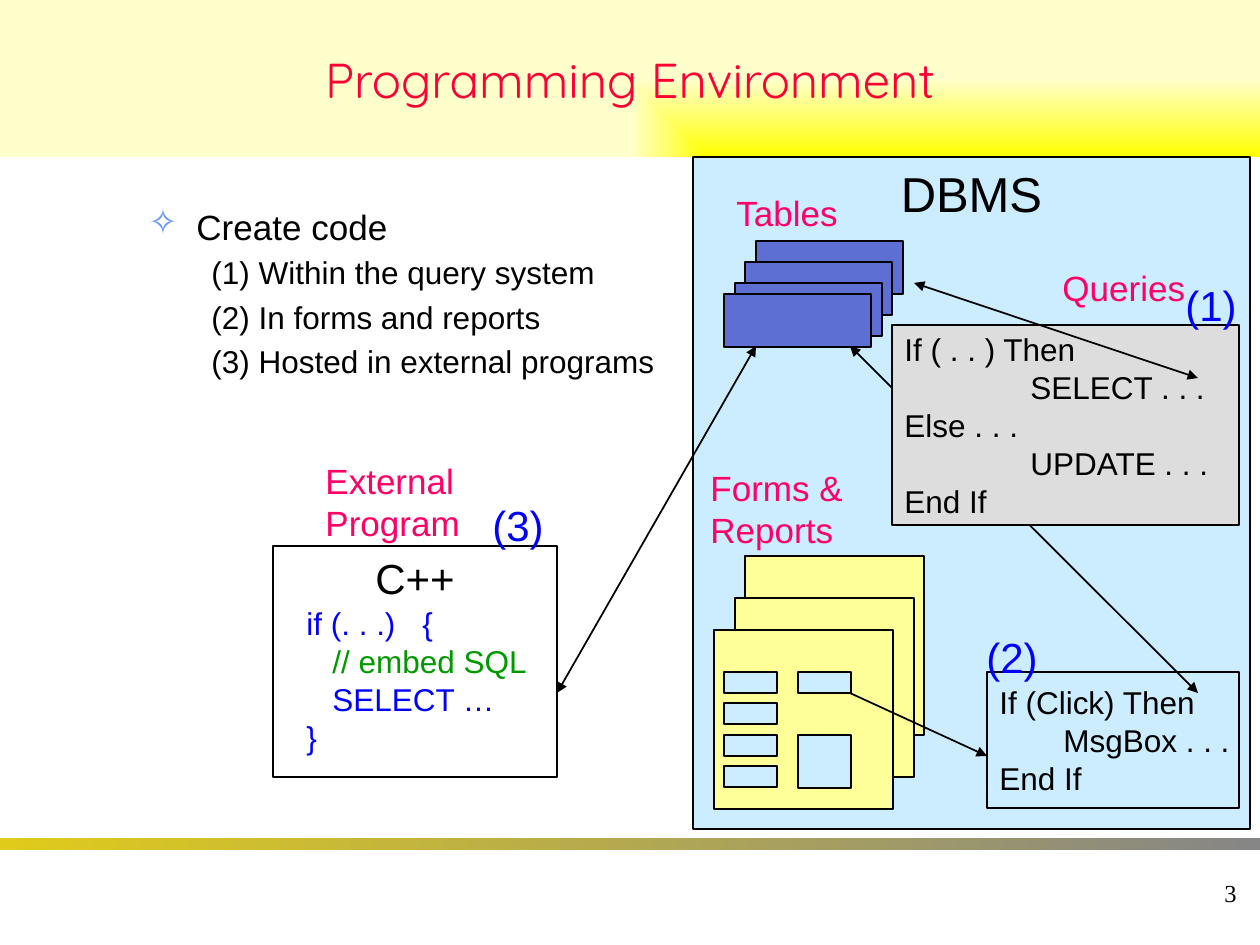
from lxml.etree import SubElement
from pptx import Presentation
from pptx.dml.color import RGBColor
from pptx.enum.shapes import MSO_CONNECTOR, MSO_SHAPE
from pptx.enum.text import MSO_ANCHOR, PP_ALIGN
from pptx.oxml import parse_xml
from pptx.oxml.ns import nsdecls, qn
from pptx.util import Pt

PX = 914400 / 126
COLORS = {
    "black": "000000", "white": "FFFFFF", "title": "FF0033", "label": "FF0066",
    "cream": "FFFFCC", "yellow": "FFFF00", "gold": "E0CB1B", "bar_gray": "868686",
    "pane": "CCECFF", "table": "5E6FD4", "form": "FFFF99", "query": "DDDDDD",
    "code": "0000FF", "comment": "009900", "bullet": "6699FF",
}


def emu(*lengths):
    return [round(length * PX) for length in lengths]


def rgb(name):
    return RGBColor.from_string(COLORS[name])


def add_box(slide, place, fill, line="black"):
    shape = slide.shapes.add_shape(MSO_SHAPE.RECTANGLE, *emu(*place))
    shape.shadow.inherit = False
    if fill:
        shape.fill.solid()
        shape.fill.fore_color.rgb = rgb(fill)
    if line:
        shape.line.color.rgb = rgb(line)
        shape.line.width = Pt(1)
    else:
        shape.line.fill.background()
    return shape


def write(shape, text, size, color="black", font="Arial", align=PP_ALIGN.LEFT,
          anchor=MSO_ANCHOR.TOP, wrap=False):
    frame = shape.text_frame
    frame.text = text
    frame.word_wrap = wrap
    frame.vertical_anchor = anchor
    for paragraph in frame.paragraphs:
        paragraph.alignment = align
        for run in paragraph.runs:
            run.font.size = Pt(size)
            run.font.name = font
            run.font.color.rgb = rgb(color)
    return frame.paragraphs


def add_label(slide, place, text, size=20, color="label", **style):
    return write(slide.shapes.add_textbox(*emu(*place)), text, size, color, **style)


def indent(paragraph, left, first=0):
    properties = paragraph._p.get_or_add_pPr()
    margin, hanging = emu(left, first)
    properties.set("marL", str(margin))
    properties.set("indent", str(hanging))
    return properties


def add_tab(paragraph, position):
    tabs = SubElement(paragraph._p.get_or_add_pPr(), qn("a:tabLst"))
    SubElement(tabs, qn("a:tab"), pos=str(emu(position)[0]), algn="l")


def add_bullet(properties, character, color):
    bullet_color = SubElement(properties, qn("a:buClr"))
    SubElement(bullet_color, qn("a:srgbClr"), val=COLORS[color])
    SubElement(properties, qn("a:buChar"), char=character)


def add_arrow(slide, start, end, both=True):
    connector = slide.shapes.add_connector(MSO_CONNECTOR.STRAIGHT, *emu(*start, *end))
    connector.line.color.rgb = rgb("black")
    connector.line.width = Pt(1)
    line = connector.line._get_or_add_ln()
    if both:
        SubElement(line, qn("a:headEnd"), type="triangle")
    SubElement(line, qn("a:tailEnd"), type="triangle")
    SubElement(connector._element.spPr, qn("a:effectLst"))


def add_title(slide):
    shape = add_box(slide, (0, 0, 1260, 157), None, None)
    gradient = parse_xml(
        f'<a:gradFill {nsdecls("a")} rotWithShape="0"><a:gsLst>'
        f'<a:gs pos="0"><a:srgbClr val="{COLORS["yellow"]}"/></a:gs>'
        f'<a:gs pos="100000"><a:srgbClr val="{COLORS["cream"]}"/></a:gs></a:gsLst>'
        '<a:path path="rect"><a:fillToRect l="100000" t="100000"/></a:path></a:gradFill>')
    shape._element.spPr.find(qn("a:prstGeom")).addnext(gradient)
    write(shape, "Programming Environment", 28, "title", "Quicksand",
          PP_ALIGN.CENTER, MSO_ANCHOR.MIDDLE, True)


def add_footer(slide):
    bar = add_box(slide, (0, 838, 1260, 12), None, None)
    bar.fill.gradient()
    bar.fill.gradient_angle = 0
    for stop, color in zip(bar.fill.gradient_stops, ("gold", "bar_gray")):
        stop.color.rgb = rgb(color)
    add_label(slide, (987, 861, 262, 63), "3", 14, "black", font="Times New Roman",
              align=PP_ALIGN.RIGHT, anchor=MSO_ANCHOR.MIDDLE)


def add_outline(slide):
    text = ("Create code\n(1) Within the query system\n(2) In forms and reports\n"
            "(3) Hosted in external programs")
    heading, *items = add_label(slide, (136, 199, 536, 630), text, 18, "black", wrap=True)
    heading.runs[0].font.size = Pt(20)
    heading.space_before = Pt(4)
    add_bullet(indent(heading, 48, -48), "✧", "bullet")
    for item in items:
        item.level = 1
        item.space_before = Pt(3.6)
        indent(item, 102, -39)


def add_stacks(slide):
    for left, top in ((756, 241), (745, 262), (735, 283), (724, 294)):
        add_box(slide, (left, top, 147, 53), "table")
    for left, top in ((745, 556), (735, 598), (714, 630)):
        add_box(slide, (left, top, 179, 179), "form")
    for row in range(4):
        add_box(slide, (724, 672 + row * 63 // 2, 53, 21), "pane")
    add_box(slide, (798, 735, 53, 53), "pane")
    add_box(slide, (798, 672, 53, 21), "pane")


def add_code_box(slide, place, fill, text, step):
    shape = add_box(slide, place, fill)
    for paragraph in write(shape, text, 18, anchor=MSO_ANCHOR.MIDDLE):
        if paragraph.text.endswith(". . .") and not paragraph.text.startswith("Else"):
            indent(paragraph, step)


def add_external_program(slide):
    write(add_box(slide, (273, 546, 284, 231), "white"), "C++", 24, align=PP_ALIGN.CENTER)
    add_label(slide, (313, 453, 170, 97), "External\nProgram")
    code = add_box(slide, (294, 598, 262, 168), "white", None)
    opening, comment, query, _ = write(
        code, "if (. . .)\t{\n// embed SQL\nSELECT …\n}", 18, "code")
    add_tab(opening, 116)
    for paragraph in (comment, query):
        indent(paragraph, 26)
    comment.runs[0].font.color.rgb = rgb("comment")


def main():
    """Build the programming environment slide and save it."""
    presentation = Presentation()
    presentation.slide_width, presentation.slide_height = emu(1260, 945)
    slide = presentation.slides.add_slide(presentation.slide_layouts[6])
    add_footer(slide)
    add_title(slide)
    add_outline(slide)
    write(add_box(slide, (693, 157, 557, 672), "pane"), "DBMS", 28, align=PP_ALIGN.CENTER)
    add_stacks(slide)
    add_label(slide, (724, 185, 140, 54), "Tables")
    add_label(slide, (698, 460, 170, 97), "Forms &\nReports")
    add_label(slide, (1050, 260, 160, 54), "Queries")
    add_code_box(slide, (987, 672, 252, 136), "pane",
                 "If (Click) Then\nMsgBox . . .\nEnd If", 64)
    add_arrow(slide, (1198, 693), (850, 346))
    add_arrow(slide, (850, 693), (987, 756), both=False)
    add_code_box(slide, (892, 325, 347, 200), "query",
                 "If ( . . ) Then\nSELECT . . .\nElse . . .\nUPDATE . . .\nEnd If", 126)
    add_arrow(slide, (1198, 378), (914, 283))
    add_external_program(slide)
    add_arrow(slide, (557, 693), (756, 346))
    for text, left, top in (("(2)", 974, 625), ("(1)", 1173, 273), ("(3)", 480, 493)):
        add_label(slide, (left, top, 84, 63), text, 24, "code")
    presentation.save("out.pptx")


if __name__ == "__main__":
    main()
